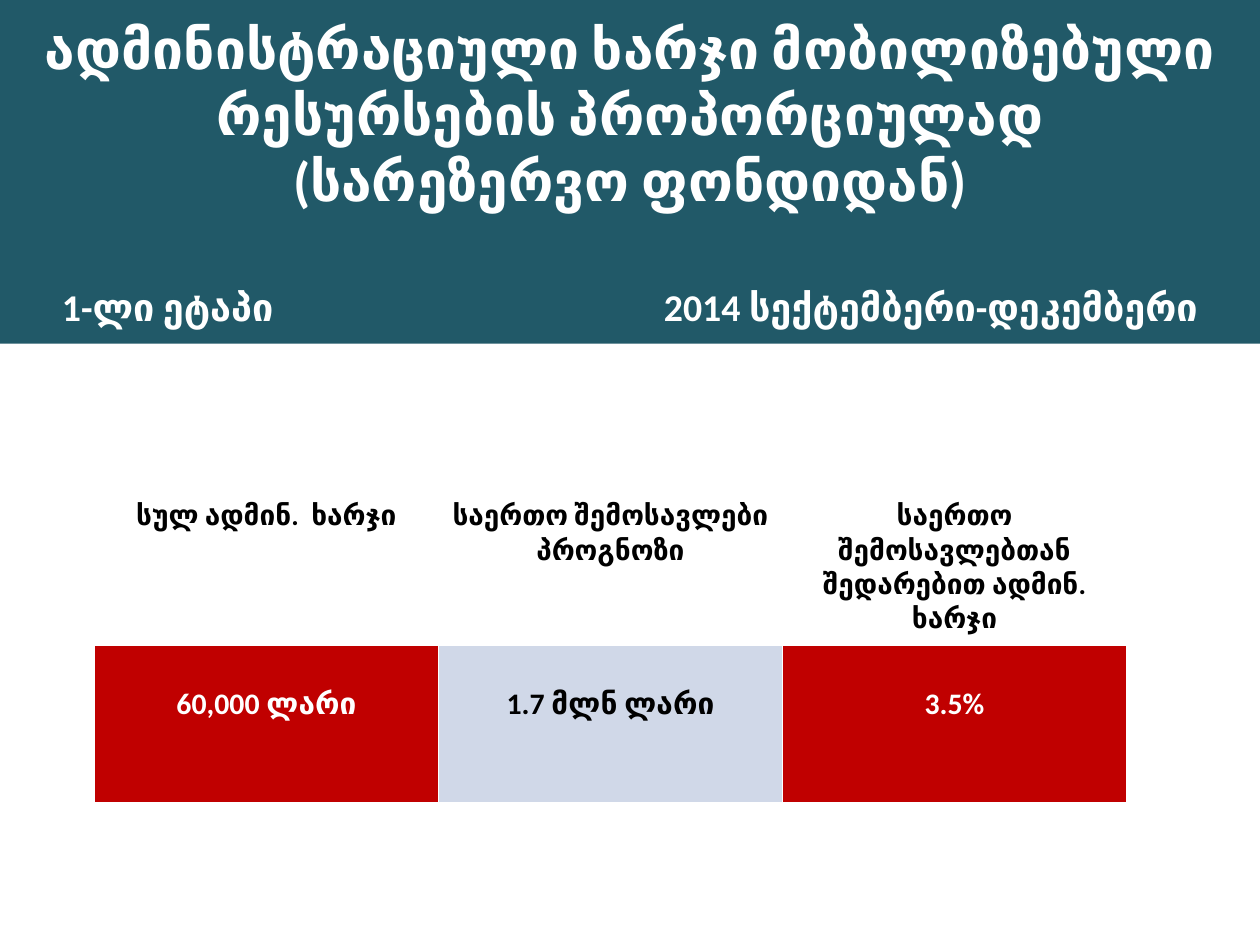
from lxml.etree import SubElement
from pptx import Presentation
from pptx.dml.color import RGBColor
from pptx.enum.shapes import MSO_SHAPE as Shape
from pptx.enum.text import MSO_ANCHOR as Anchor, PP_ALIGN as Align
from pptx.oxml.ns import qn
from pptx.util import Pt

WHITE, BLACK, TEAL, RED, PALE = "FFFFFF", "000000", "215968", "C00000", "D0D8E8"
TITLE = "ადმინისტრაციული ხარჯი მობილიზებული რესურსების პროპორციულად\n(სარეზერვო ფონდიდან)"
HEADINGS = [
    "სულ ადმინ.  ხარჯი",
    "საერთო შემოსავლები პროგნოზი",
    "საერთო შემოსავლებთან შედარებით ადმინ. ხარჯი",
]
VALUES = [
    ("60,000 ლარი", RED, WHITE),
    ("1.7 მლნ ლარი", PALE, BLACK),
    ("3.5%", RED, WHITE),
]


def set_fill(item, color):
    """Give a shape or cell a solid fill."""
    item.fill.solid()
    item.fill.fore_color.rgb = RGBColor.from_string(color)


def write(frame, text, size, color, align=Align.CENTER):
    """Fill a text frame with bold Calibri text."""
    frame.text = text
    frame.word_wrap = True
    for para in frame.paragraphs:
        para.alignment = align
        for span in para.runs:
            span.font.name = "Calibri"
            span.font.size = Pt(size)
            span.font.bold = True
            span.font.color.rgb = RGBColor.from_string(color)


def add_title_band(page, width, height):
    """Draw the title band across the top of the page."""
    band = page.shapes.add_shape(Shape.RECTANGLE, 0, 0, Pt(width), Pt(height))
    band.shadow.inherit = False
    set_fill(band, TEAL)
    band.line.fill.background()
    frame = band.text_frame
    frame.vertical_anchor = Anchor.TOP
    frame.margin_top = Pt(8.3)
    write(frame, TITLE, 31.5, WHITE)


def add_label(page, text, left, width, align):
    """Place one label on the lower line of the title band."""
    box = page.shapes.add_textbox(Pt(left), Pt(162), Pt(width), Pt(26.4))
    frame = box.text_frame
    frame.margin_left = frame.margin_right = 0
    frame.margin_top = frame.margin_bottom = 0
    write(frame, text, 21.6, WHITE, align)


def set_borders(cell, top, bottom):
    """Give a cell white borders of the stated widths."""
    properties = cell._tc.get_or_add_tcPr()
    for side, width in (("L", 1), ("R", 1), ("T", top), ("B", bottom)):
        line = SubElement(properties, qn(f"a:ln{side}"), w=str(Pt(width)))
        fill = SubElement(line, qn("a:solidFill"))
        SubElement(fill, qn("a:srgbClr"), val=WHITE)


def add_cost_table(page):
    """Add the table of administrative cost against income."""
    row_heights = (86.2, 91.2)
    column_width = 196.6
    frame = page.shapes.add_table(
        len(row_heights), len(HEADINGS), Pt(54), Pt(281.6),
        Pt(column_width * len(HEADINGS)), Pt(sum(row_heights)),
    )
    table = frame.table
    for row, height in zip(table.rows, row_heights):
        row.height = Pt(height)
    for index, (heading, value) in enumerate(zip(HEADINGS, VALUES)):
        table.columns[index].width = Pt(column_width)
        top_cell, value_cell = table.cell(0, index), table.cell(1, index)
        set_borders(top_cell, 1, 3)
        set_fill(top_cell, WHITE)
        write(top_cell.text_frame, heading, 16, BLACK)
        text, fill, color = value
        set_borders(value_cell, 3, 1)
        set_fill(value_cell, fill)
        value_cell.margin_top = Pt(24.3)
        write(value_cell.text_frame, text, 17, color)


def main():
    """Build and save the deck."""
    deck = Presentation()
    deck.slide_width, deck.slide_height = Pt(720), Pt(540)
    page = deck.slides.add_slide(deck.slide_layouts[6])
    add_title_band(page, 720, 196.4)
    add_label(page, "1-ლი ეტაპი", 35.4, 200, Align.LEFT)
    add_label(page, "2014 სექტემბერი-დეკემბერი", 324.6, 360, Align.RIGHT)
    add_cost_table(page)
    deck.save("out.pptx")


if __name__ == "__main__":
    main()
